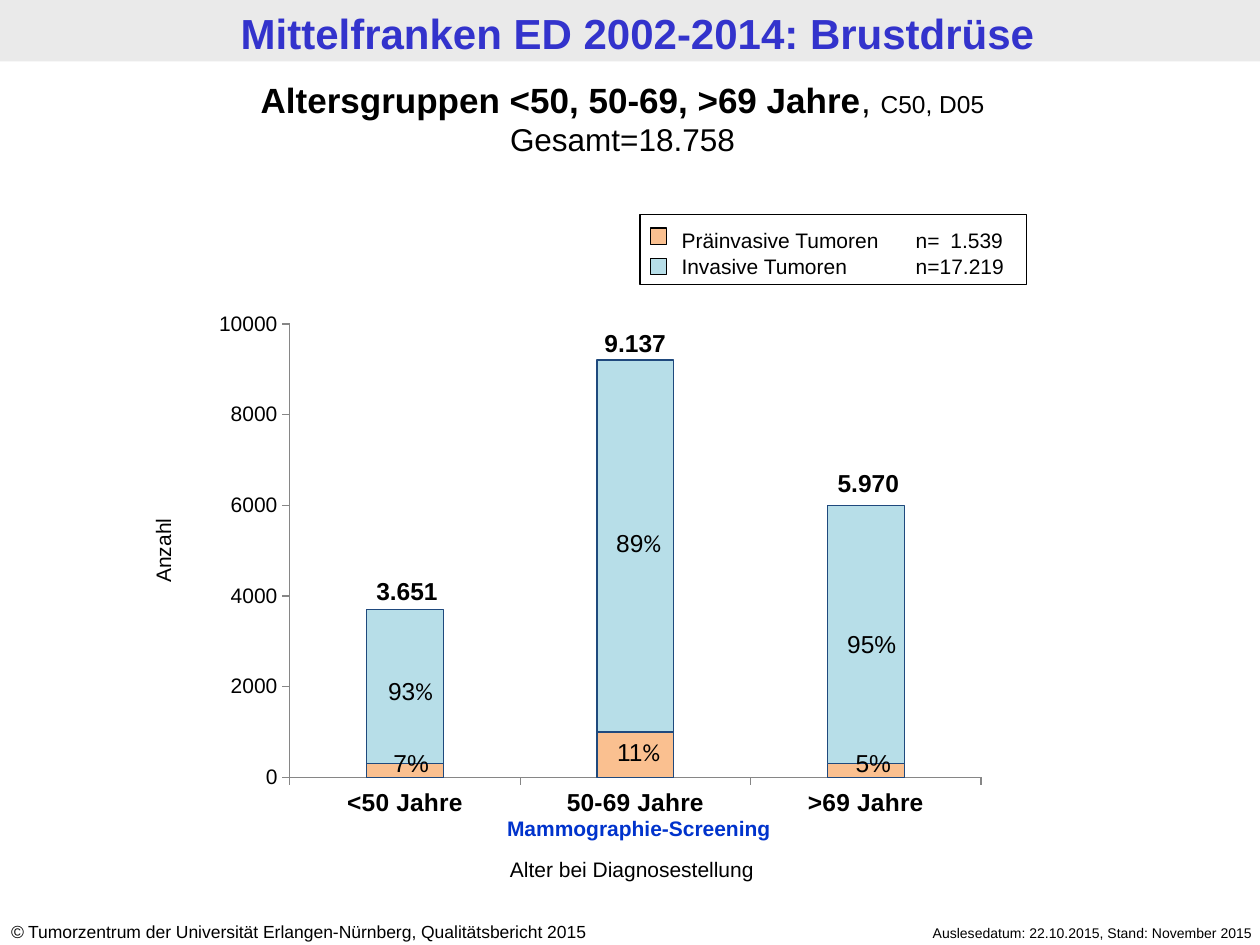
"""Build the slide on breast tumours by age group in Mittelfranken."""
from typing import NamedTuple, Optional

from lxml.etree import SubElement
from pptx import Presentation
from pptx.chart.data import CategoryChartData
from pptx.dml.color import RGBColor
from pptx.enum.chart import XL_CHART_TYPE, XL_TICK_MARK
from pptx.enum.shapes import MSO_SHAPE
from pptx.enum.text import MSO_ANCHOR, MSO_AUTO_SIZE, PP_ALIGN
from pptx.oxml import parse_xml
from pptx.oxml.ns import nsdecls, qn
from pptx.util import Cm, Pt

BLACK = RGBColor(0x00, 0x00, 0x00)
BAND_GRAY = RGBColor(0xEA, 0xEA, 0xEA)
AXIS_GRAY = RGBColor(0x86, 0x86, 0x86)
TITLE_BLUE = RGBColor(0x33, 0x33, 0xCC)
SCREENING_BLUE = RGBColor(0x00, 0x33, 0xCC)
BAR_OUTLINE = RGBColor(0x1F, 0x49, 0x7D)
PREINVASIVE = RGBColor(0xFA, 0xC0, 0x90)
INVASIVE = RGBColor(0xB7, 0xDE, 0xE8)


class Frame(NamedTuple):
    left: float
    top: float
    width: float
    height: float


class Span(NamedTuple):
    text: str
    size: int
    bold: bool = False
    color: RGBColor = BLACK
    font: str = "Arial"
    italic: bool = False


class BarLabel(NamedTuple):
    text: str
    left: float
    top: float
    width: float
    bold: bool = False
    symbol: str = ""


BAR_LABELS = [
    BarLabel("3.651", 6.91, 11.48, 2.59, bold=True),
    BarLabel("9.137", 11.51, 6.48, 2.59, bold=True),
    BarLabel("5.970", 16.21, 9.32, 2.59, bold=True),
    BarLabel("93", 7.26, 13.51, 2.03, symbol="%"),
    BarLabel("89", 11.86, 10.52, 2.03, symbol="%"),
    BarLabel("95%", 16.43, 12.55, 2.29),
    BarLabel("7%", 7.49, 14.96, 1.6),
    BarLabel("11", 11.86, 14.73, 2.03, symbol="%"),
    BarLabel("5%", 16.31, 14.96, 2.59),
]


def place(frame: Frame) -> tuple:
    """Return the lengths of a frame."""
    return tuple(Cm(value) for value in frame)


def style_font(font, span: Span) -> None:
    """Apply the look of a span to a font."""
    font.name, font.size = span.font, Pt(span.size)
    font.bold, font.italic = span.bold, span.italic
    font.color.rgb = span.color


def write_paragraph(para, spans: list, align: PP_ALIGN) -> None:
    """Write spans, with a paragraph font when there is only one."""
    para.alignment = align
    for span in spans:
        run = para.add_run()
        run.text = span.text
        style_font(para.font if len(spans) == 1 else run.font, span)


def add_text(page, frame: Frame, paragraphs: list, align=PP_ALIGN.CENTER, tabs=()):
    """Add a wrapping text box with one list of spans per paragraph."""
    box = page.shapes.add_textbox(*place(frame))
    text = box.text_frame
    text.word_wrap = True
    for index, spans in enumerate(paragraphs):
        para = text.add_paragraph() if index else text.paragraphs[0]
        if tabs:
            tab_list = SubElement(para._p.get_or_add_pPr(), qn("a:tabLst"))
            for position, side in tabs:
                SubElement(tab_list, qn("a:tab"), pos=str(Cm(position)), algn=side)
        write_paragraph(para, spans, align)
    return box


def add_rectangle(page, frame: Frame, fill: Optional[RGBColor], line: Optional[RGBColor]):
    """Add a plain rectangle."""
    box = page.shapes.add_shape(MSO_SHAPE.RECTANGLE, *place(frame))
    box.shadow.inherit = False
    if fill is None:
        box.fill.background()
    else:
        box.fill.solid()
        box.fill.fore_color.rgb = fill
    if line is None:
        box.line.fill.background()
    else:
        box.line.color.rgb = line
        box.line.width = Pt(0.75)
    return box


def add_title(page) -> None:
    """Place the title on its grey band."""
    title = page.shapes.title
    title.left, title.top, title.width, title.height = place(Frame(0.15, 0.03, 25.4, 1.24))
    text = title.text_frame
    text.auto_size = MSO_AUTO_SIZE.NONE
    text.vertical_anchor = MSO_ANCHOR.MIDDLE
    heading = Span("Mittelfranken ED 2002-2014: Brustdrüse", 24, True, TITLE_BLUE)
    write_paragraph(text.paragraphs[0], [heading], PP_ALIGN.CENTER)
    band = add_rectangle(page, Frame(0, 0, 25.4, 1.24), BAND_GRAY, None)
    title._element.addprevious(band._element)


def add_age_chart(page) -> None:
    """Add the stacked columns of tumours by age group."""
    data = CategoryChartData()
    data.categories = ["<50 Jahre", "50-69 Jahre", ">69 Jahre"]
    data.add_series("Series 1", [300, 1000, 300])
    data.add_series("Series 2", [3400, 8200, 5700])
    frame = place(Frame(3.84, 4.85, 17.73, 11.84))
    chart = page.shapes.add_chart(XL_CHART_TYPE.COLUMN_STACKED, *frame, data).chart
    chart.has_legend = chart.has_title = False
    style_font(chart.font, Span("", 18, font="Calibri"))
    plot = chart.plots[0]
    plot.gap_width, plot.overlap, plot.vary_by_categories = 200, 100, False
    for series, color in zip(plot.series, (PREINVASIVE, INVASIVE)):
        series.format.fill.solid()
        series.format.fill.fore_color.rgb = color
        series.format.line.color.rgb = BAR_OUTLINE
        series.format.line.width = Pt(0.75)
    values = chart.value_axis
    values.minimum_scale, values.maximum_scale, values.major_unit = 0, 10000, 2000
    for axis, span in ((chart.category_axis, Span("", 14, True)), (values, Span("", 12))):
        axis.has_major_gridlines = False
        axis.major_tick_mark = XL_TICK_MARK.OUTSIDE
        axis.minor_tick_mark = XL_TICK_MARK.NONE
        axis.format.line.color.rgb = AXIS_GRAY
        style_font(axis.tick_labels.font, span)
    area = chart._chartSpace.find(".//" + qn("c:plotArea"))
    for layout in area.findall(qn("c:layout")):
        area.remove(layout)
    area.insert(0, parse_xml(
        f'<c:layout {nsdecls("c")}><c:manualLayout><c:layoutTarget val="inner"/>'
        '<c:xMode val="edge"/><c:yMode val="edge"/><c:x val="0.113"/><c:y val="0.142"/>'
        '<c:w val="0.786"/><c:h val="0.772"/></c:manualLayout></c:layout>'))


def add_legend(page) -> None:
    """Add the framed legend with its counts."""
    rows = ["Präinvasive Tumoren\tn=\t1.539", "Invasive Tumoren\t\tn=\t17.219"]
    add_text(page, Frame(13.49, 4.47, 7.11, 1.27), [[Span(row, 12)] for row in rows],
             PP_ALIGN.LEFT, [(3.73, "l"), (4.72, "l"), (6.48, "r")])
    add_rectangle(page, Frame(12.9, 4.32, 7.8, 1.42), None, BLACK)
    for top, color in ((4.6, PREINVASIVE), (5.21, INVASIVE)):
        add_rectangle(page, Frame(13.11, top, 0.33, 0.33), color, BLACK)


def add_bar_label(page, label: BarLabel) -> None:
    """Add a total or a share beside its column."""
    spans = [Span(label.text, 14, label.bold)]
    if label.symbol:
        spans.append(Span(label.symbol, 14, font="Calibri"))
    add_text(page, Frame(label.left, label.top, label.width, 0.86), [spans])


def main() -> None:
    """Build and save the deck."""
    deck = Presentation()
    deck.slide_width, deck.slide_height = Cm(25.4), Cm(19.05)
    page = deck.slides.add_slide(deck.slide_layouts[5])
    add_title(page)
    add_text(page, Frame(16.89, 18.52, 8.61, 0.61),
             [[Span("Auslesedatum: 22.10.2015, Stand: November 2015", 8)]], PP_ALIGN.RIGHT)
    add_text(page, Frame(-0.03, 18.44, 13.31, 0.69),
             [[Span("©", 10, italic=True),
               Span(" Tumorzentrum der Universität Erlangen-Nürnberg, Qualitätsbericht 2015", 10)]],
             PP_ALIGN.LEFT)
    add_age_chart(page)
    add_text(page, Frame(0, 1.45, 25.1, 1.88),
             [[Span("Altersgruppen <50, 50-69, >69 Jahre", 20, True), Span(", ", 20),
               Span("C50, D05", 14)], [Span("Gesamt=18.758", 18)]])
    add_text(page, Frame(8.51, 17.15, 8.46, 0.76), [[Span("Alter bei Diagnosestellung", 12)]])
    add_text(page, Frame(-0.03, 10.72, 6.63, 0.76), [[Span("Anzahl", 12)]]).rotation = 270
    add_legend(page)
    for label in BAR_LABELS:
        add_bar_label(page, label)
    add_text(page, Frame(9.5, 16.31, 6.76, 0.76),
             [[Span("Mammographie-Screening", 12, True, SCREENING_BLUE)]])
    deck.save("out.pptx")


if __name__ == "__main__":
    main()
